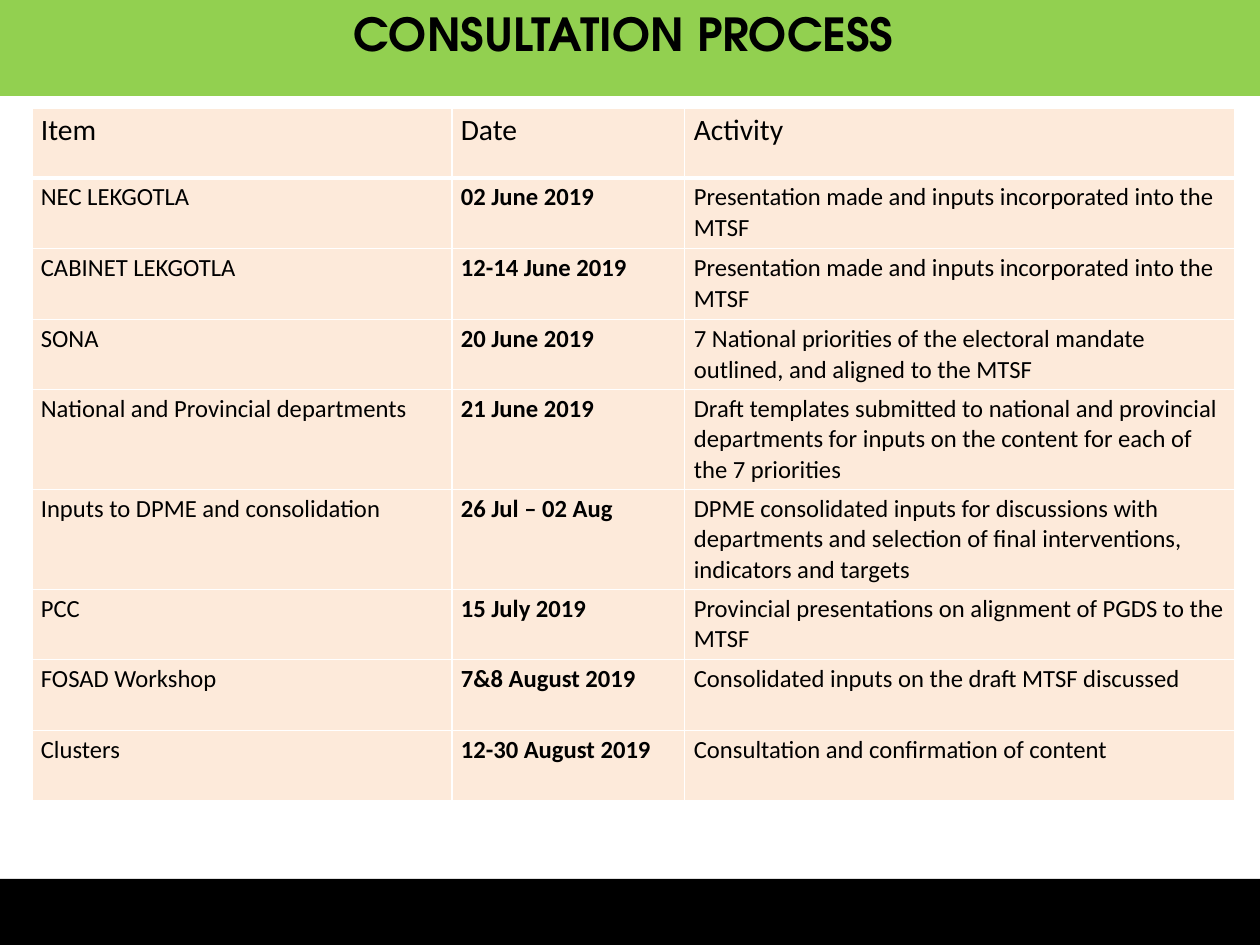
from lxml import etree
from pptx import Presentation
from pptx.dml.color import RGBColor
from pptx.enum.shapes import MSO_SHAPE
from pptx.enum.text import MSO_ANCHOR, PP_ALIGN
from pptx.oxml.ns import qn
from pptx.util import Pt

RECT = MSO_SHAPE.RECTANGLE
TOP = MSO_ANCHOR.TOP
CENTER = PP_ALIGN.CENTER
PX = 10320  # EMU per px
WIDE, HIGH = 1260, 945


def color(hex):
    return RGBColor.from_string(hex)


def add_run(para, text, font, size, bold):
    run = para.add_run()
    run.text = text
    run.font.name = font
    run.font.size = Pt(size)
    run.font.bold = bold
    run.font.color.rgb = color("000000")


deck = Presentation()
deck.slide_width, deck.slide_height = WIDE * PX, HIGH * PX
slide = deck.slides.add_slide(deck.slide_layouts[6])

# Footer and title bands
bands = []
for top, high, fill in [(879, 66, "000000"), (0, 96, "92D050")]:
    band = slide.shapes.add_shape(RECT, 0, top * PX, WIDE * PX, high * PX)
    band.shadow.inherit = False
    band.fill.solid()
    band.fill.fore_color.rgb = color(fill)
    band.line.fill.background()
    bands.append(band)

# Title
frame = bands[1].text_frame
frame.word_wrap = True
frame.vertical_anchor = TOP
frame.margin_left = frame.margin_right = 0
frame.margin_top = frame.margin_bottom = 0
para = frame.paragraphs[0]
para.alignment = CENTER
para.line_spacing = Pt(49.1)
add_run(para, "CONSULTATION PROCESS ", "TeX Gyre Adventor", 37, True)

# Consultation table
rows = [
    ("Item", "Date", "Activity"),
    ("NEC LEKGOTLA", "02 June 2019",
     "Presentation made and inputs incorporated into the MTSF"),
    ("CABINET LEKGOTLA", "12-14 June 2019",
     "Presentation made and inputs incorporated into the MTSF"),
    ("SONA", "20 June 2019",
     "7 National priorities of the electoral mandate outlined, and aligned to the MTSF"),
    ("National and Provincial departments", "21 June 2019",
     "Draft templates submitted to national and provincial departments "
     "for inputs on the content for each of the 7 priorities"),
    ("Inputs to DPME and consolidation", "26 Jul – 02 Aug",
     "DPME consolidated inputs for discussions with departments "
     "and selection of final interventions, indicators and targets"),
    ("PCC", "15 July 2019",
     "Provincial presentations on alignment of PGDS to the MTSF"),
    ("FOSAD Workshop", "7&8 August 2019",
     "Consolidated inputs on the draft MTSF discussed"),
    ("Clusters", "12-30 August 2019",
     "Consultation and confirmation of content"),
]
widths = [420, 233, 550]
heights = [70, 71, 71, 70, 100, 99, 70, 71, 70]
table = slide.shapes.add_table(
    len(rows), len(widths), 32 * PX, 108 * PX,
    sum(widths) * PX, sum(heights) * PX).table
table.first_row = table.horz_banding = False
for col, wide in zip(table.columns, widths):
    col.width = wide * PX
for row, high in zip(table.rows, heights):
    row.height = high * PX

for r, texts in enumerate(rows):
    head = r == 0
    for c, text in enumerate(texts):
        cell = table.cell(r, c)
        para = cell.text_frame.paragraphs[0]
        add_run(para, text, "Calibri", 24 if head else 20, c == 1 and not head)

        # White borders go before the fill, thicker under the header
        props = cell._tc.get_or_add_tcPr()
        for side in ("lnL", "lnR", "lnT", "lnB"):
            points = 3 if head and side == "lnB" else 1
            line = etree.SubElement(props, qn("a:" + side), w=str(Pt(points)))
            solid = etree.SubElement(line, qn("a:solidFill"))
            etree.SubElement(solid, qn("a:srgbClr"), val="FFFFFF")
        cell.fill.solid()
        cell.fill.fore_color.rgb = color("FDEADA")

deck.save("out.pptx")
